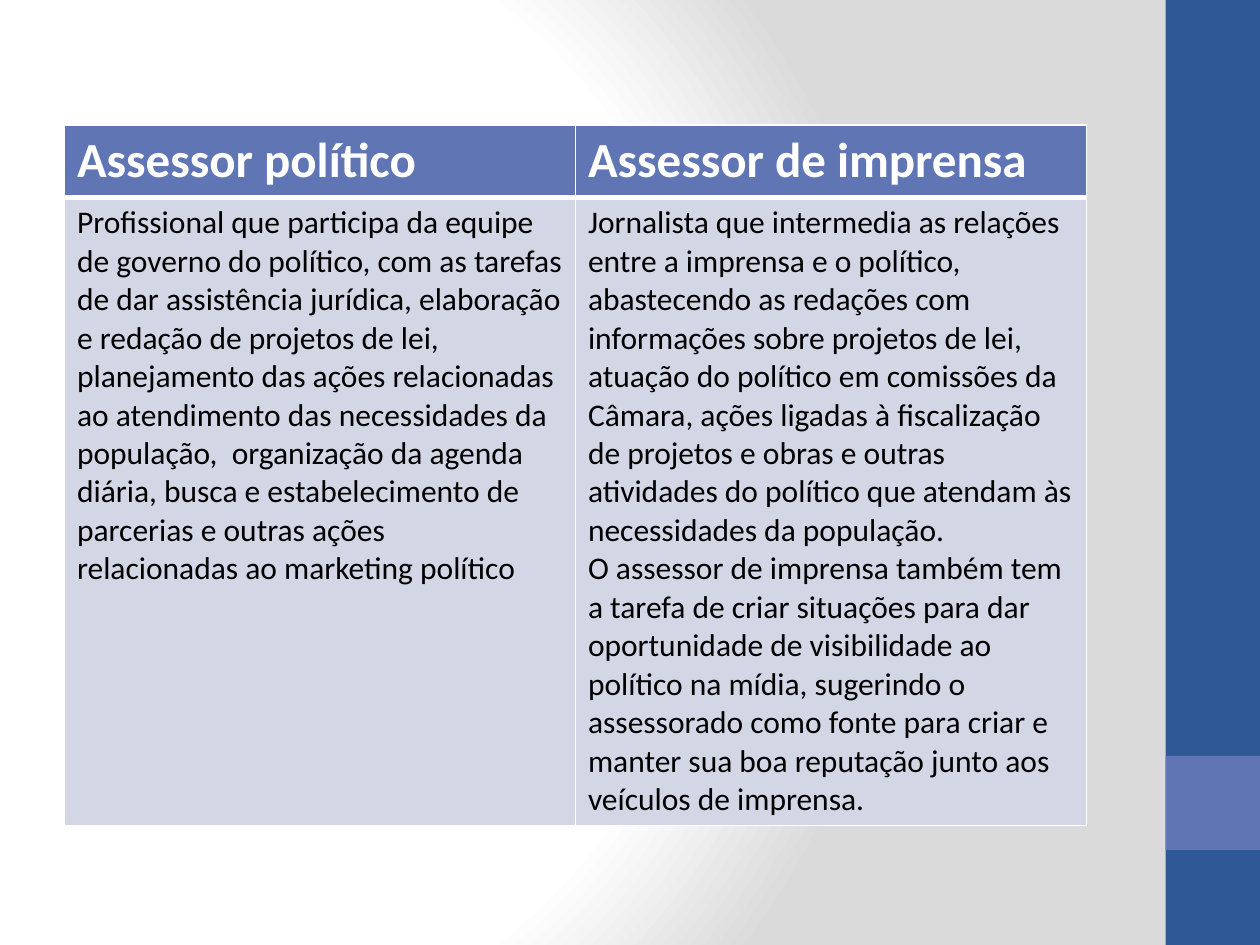
from lxml import etree
from pptx import Presentation
from pptx.dml.color import RGBColor
from pptx.enum.shapes import MSO_SHAPE
from pptx.oxml import parse_xml
from pptx.oxml.ns import qn
from pptx.util import Cm, Pt

RECT = MSO_SHAPE.RECTANGLE
A_NS = "http://schemas.openxmlformats.org/drawingml/2006/main"

WHITE = RGBColor(0xFF, 0xFF, 0xFF)
BLACK = RGBColor(0x00, 0x00, 0x00)
GREY = RGBColor(0xDA, 0xDA, 0xDA)
NAVY = RGBColor(0x2F, 0x58, 0x97)
BLUE = RGBColor(0x60, 0x76, 0xB4)
PALE = RGBColor(0xD2, 0xD6, 0xE5)

HEADER = {"size": Pt(28), "bold": True, "name": "Calibri"}
BODY = {"size": Pt(18), "bold": False, "name": "Calibri"}

# Each column: heading, then its paragraphs
COLUMNS = [
    ("Assessor político", [
        "Profissional que participa da equipe de governo do político, com as "
        "tarefas de dar assistência jurídica, elaboração e redação de projetos "
        "de lei,",
        "planejamento das ações relacionadas ao atendimento das necessidades da "
        "população,  organização da agenda diária, busca e estabelecimento de "
        "parcerias e outras ações",
        "relacionadas ao marketing político",
    ]),
    ("Assessor de imprensa", [
        "Jornalista que intermedia as relações entre a imprensa e o político,",
        "abastecendo as redações com informações sobre projetos de lei, atuação "
        "do político em comissões da Câmara, ações ligadas à fiscalização de "
        "projetos e obras e outras atividades do político que atendam às "
        "necessidades da população.",
        "O assessor de imprensa também tem a tarefa de criar situações para dar "
        "oportunidade de visibilidade ao político na mídia, sugerindo o "
        "assessorado como fonte para criar e manter sua boa reputação junto aos "
        "veículos de imprensa.",
    ]),
]


def set_background(s):
    """White glow from the left fading to grey."""
    s.background.fill.solid()
    solid = s.background._cSld.find(".//" + qn("a:solidFill"))
    stops = "".join(
        f'<a:gs pos="{pos * 1000}"><a:srgbClr val="{color}"/></a:gs>'
        for pos, color in ((0, WHITE), (75, WHITE), (100, GREY)))
    grad = parse_xml(
        f'<a:gradFill xmlns:a="{A_NS}" rotWithShape="1"><a:gsLst>{stops}</a:gsLst>'
        '<a:path path="circle">'
        '<a:fillToRect l="20000" t="50000" r="100000" b="50000"/>'
        '</a:path></a:gradFill>')
    solid.getparent().replace(solid, grad)


def add_side_band(s, left, top, width, height):
    """Dark band with a lighter square near its foot."""
    square_top = top + int(height * 0.8)
    for y, h, color in ((top, height, NAVY), (square_top, width, BLUE)):
        sp = s.shapes.add_shape(RECT, left, y, width, h)
        sp.shadow.inherit = False
        sp.fill.solid()
        sp.fill.fore_color.rgb = color
        sp.line.fill.background()


def set_borders(cell, **widths):
    tcPr = cell._tc.get_or_add_tcPr()
    for side in "LRTB":
        ln = etree.SubElement(tcPr, qn("a:ln" + side),
                              w=str(Pt(widths.get(side, 1))))
        fill = etree.SubElement(ln, qn("a:solidFill"))
        etree.SubElement(fill, qn("a:srgbClr"), val=str(WHITE))


def fill_cell(cell, paragraphs, font, text_color, fill_color, borders):
    set_borders(cell, **borders)
    cell.fill.solid()
    cell.fill.fore_color.rgb = fill_color
    tf = cell.text_frame
    for i, text in enumerate(paragraphs):
        p = tf.paragraphs[0] if i == 0 else tf.add_paragraph()
        r = p.add_run()
        r.text = text
        for name, value in font.items():
            setattr(r.font, name, value)
        r.font.color.rgb = text_color


def add_comparison(s, left, top, width, height):
    """One column for each kind of adviser."""
    table = s.shapes.add_table(2, len(COLUMNS), left, top, width, height).table
    table.rows[0].height = Cm(1.45)
    table.rows[1].height = height - Cm(1.45)
    for col, (heading, paragraphs) in enumerate(COLUMNS):
        fill_cell(table.cell(0, col), [heading], HEADER, WHITE, BLUE, {"B": 3})
        fill_cell(table.cell(1, col), paragraphs, BODY, BLACK, PALE, {"T": 3})


def main():
    prs = Presentation()
    prs.slide_width, prs.slide_height = Cm(25.4), Cm(19.05)
    s = prs.slides.add_slide(prs.slide_layouts[6])
    set_background(s)
    band = Cm(1.9)
    add_side_band(s, prs.slide_width - band, 0, band, prs.slide_height)
    add_comparison(s, Cm(1.3), Cm(2.52), Cm(20.6), Cm(14.1))
    prs.save("out.pptx")


if __name__ == "__main__":
    main()
